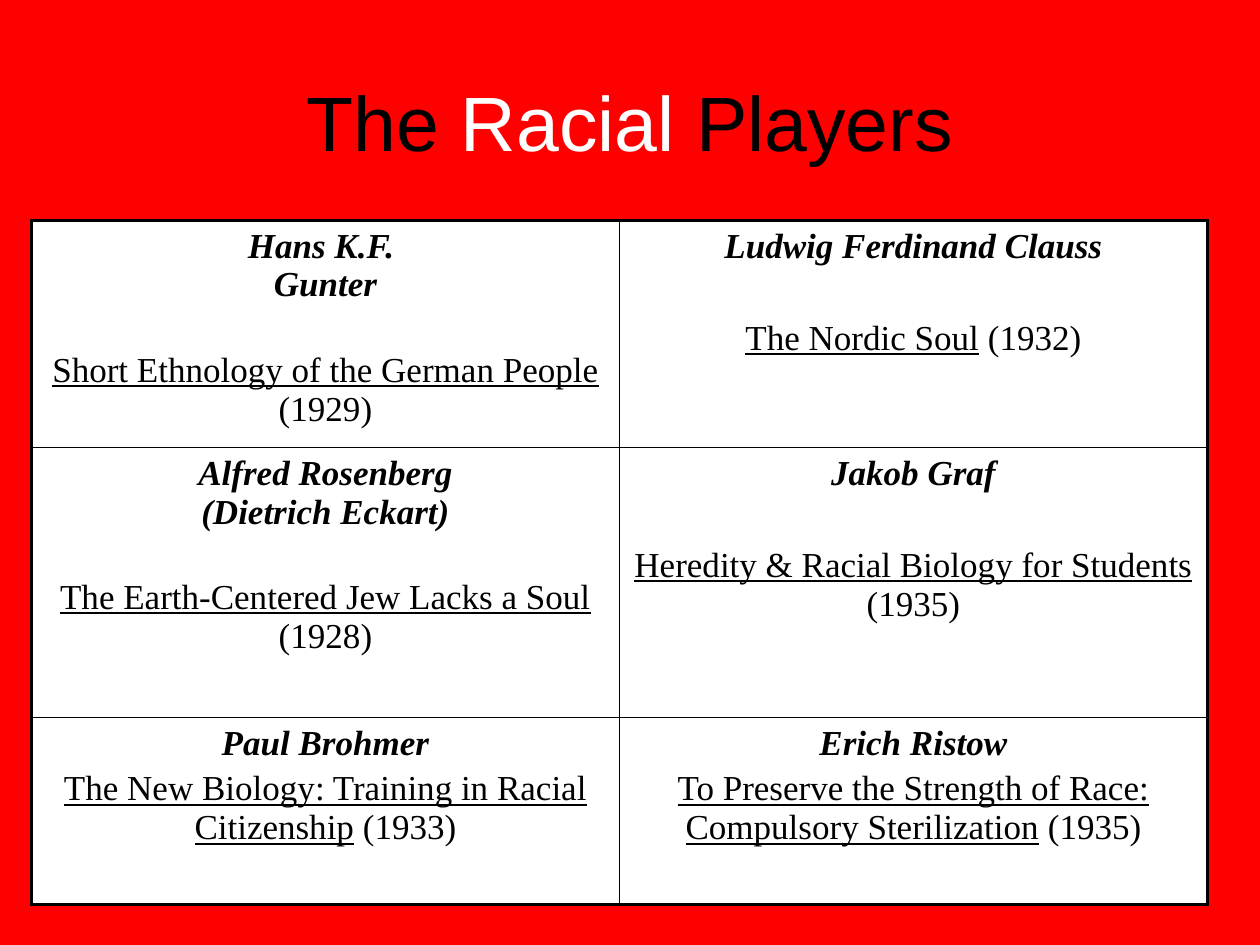
"""Builds a title slide section with a table of authors and their books."""
import dataclasses

import lxml.etree
import pptx
import pptx.dml.color
import pptx.enum.text
import pptx.oxml.ns
import pptx.util


@dataclasses.dataclass(frozen=True)
class Theme:
    red: str = "FF0000"
    black: str = "000000"
    white: str = "FFFFFF"
    head: str = "Arial"
    body: str = "Times New Roman"
    big: int = 44
    small: int = 20
    thin: float = 1
    thick: float = 2.25


COLS, ROWS = 120, 90
MID = pptx.enum.text.PP_ALIGN.CENTER
HEADING = [("The ", "black"), ("Racial", "white"), (" Players", "black")]
HEIGHTS = [20.3, 25.7, 17.8]
TIGHT, LEFT, RIGHT = 4, 26.5, 30.5
BOOKS = [
    [(["Hans K.F. ", "Gunter"], "Short Ethnology of the German People", 1929, LEFT),
     (["Ludwig Ferdinand Clauss"], "The Nordic Soul", 1932, RIGHT)],
    [(["Alfred Rosenberg", "(Dietrich Eckart)"], "The Earth-Centered Jew Lacks a Soul", 1928, LEFT),
     (["Jakob Graf"], "Heredity & Racial Biology for Students", 1935, RIGHT)],
    [(["Paul Brohmer"], "The New Biology: Training in Racial Citizenship", 1933, TIGHT),
     (["Erich Ristow"], "To Preserve the Strength of Race: Compulsory Sterilization", 1935, TIGHT)],
]


class Deck:
    def __init__(self, theme):
        self.theme = theme
        self.show = pptx.Presentation()
        self.show.slide_width = pptx.util.Inches(10)
        self.show.slide_height = pptx.util.Inches(7.5)

    def across(self, count):
        return round(self.show.slide_width * count / COLS)

    def down(self, count):
        return round(self.show.slide_height * count / ROWS)

    def box(self, x, y, wide, high):
        return self.across(x), self.down(y), self.across(wide), self.down(high)

    def paint(self, fill, color):
        fill.solid()
        fill.fore_color.rgb = pptx.dml.color.RGBColor.from_string(color)

    def page(self):
        self.slide = self.show.slides.add_slide(self.show.slide_layouts[6])
        self.paint(self.slide.background.fill, self.theme.red)

    def run(self, para, text, color, **style):
        run = para.add_run()
        run.text = text
        for name, value in style.items():
            setattr(run.font, name, value)
        self.paint(run.font.fill, color)

    def title(self, parts, *place):
        shape = self.slide.shapes.add_textbox(*self.box(*place))
        self.paint(shape.fill, self.theme.red)
        frame = shape.text_frame
        frame.word_wrap = True
        frame.vertical_anchor = pptx.enum.text.MSO_ANCHOR.MIDDLE
        para = frame.paragraphs[0]
        para.alignment = MID
        for text, color in parts:
            self.run(para, text, getattr(self.theme, color),
                     name=self.theme.head, size=pptx.util.Pt(self.theme.big))

    def edge(self, cell, side, width):
        make, qn = lxml.etree.SubElement, pptx.oxml.ns.qn
        line = make(cell._tc.get_or_add_tcPr(), qn(f"a:ln{side}"), w=str(pptx.util.Pt(width)))
        make(make(line, qn("a:solidFill")), qn("a:srgbClr"), val=self.theme.black)

    def entry(self, cell, names, book, year, gap):
        base = {"name": self.theme.body, "size": pptx.util.Pt(self.theme.small)}
        para = cell.text_frame.paragraphs[0]
        para.alignment = MID
        for index, name in enumerate(names):
            if index:
                para.add_line_break()
            self.run(para, name, self.theme.black, bold=True, italic=True, **base)
        para = cell.text_frame.add_paragraph()
        para.alignment = MID
        para.space_before = pptx.util.Pt(gap)
        self.run(para, book, self.theme.black, underline=True, **base)
        self.run(para, f" ({year})", self.theme.black, **base)

    def table(self, data, heights, x, y, wide):
        rows, cols = len(data), len(data[0])
        place = self.box(x, y, wide, sum(heights))
        table = self.slide.shapes.add_table(rows, cols, *place).table
        for name in ("first_row", "horz_banding"):
            setattr(table, name, False)
        for row, high in zip(table.rows, heights):
            row.height = self.down(high)
        for r, line in enumerate(data):
            for c, item in enumerate(line):
                cell = table.cell(r, c)
                outer = {"L": c == 0, "R": c == cols - 1, "T": r == 0, "B": r == rows - 1}
                for side, bold in outer.items():
                    self.edge(cell, side, self.theme.thick if bold else self.theme.thin)
                self.paint(cell.fill, self.theme.white)
                self.entry(cell, *item)


def main():
    deck = Deck(Theme())
    deck.page()
    deck.title(HEADING, 9, 4, 102, 15)
    deck.table(BOOKS, HEIGHTS, 3, 21, 112)
    deck.show.save("out.pptx")


if __name__ == "__main__":
    main()
